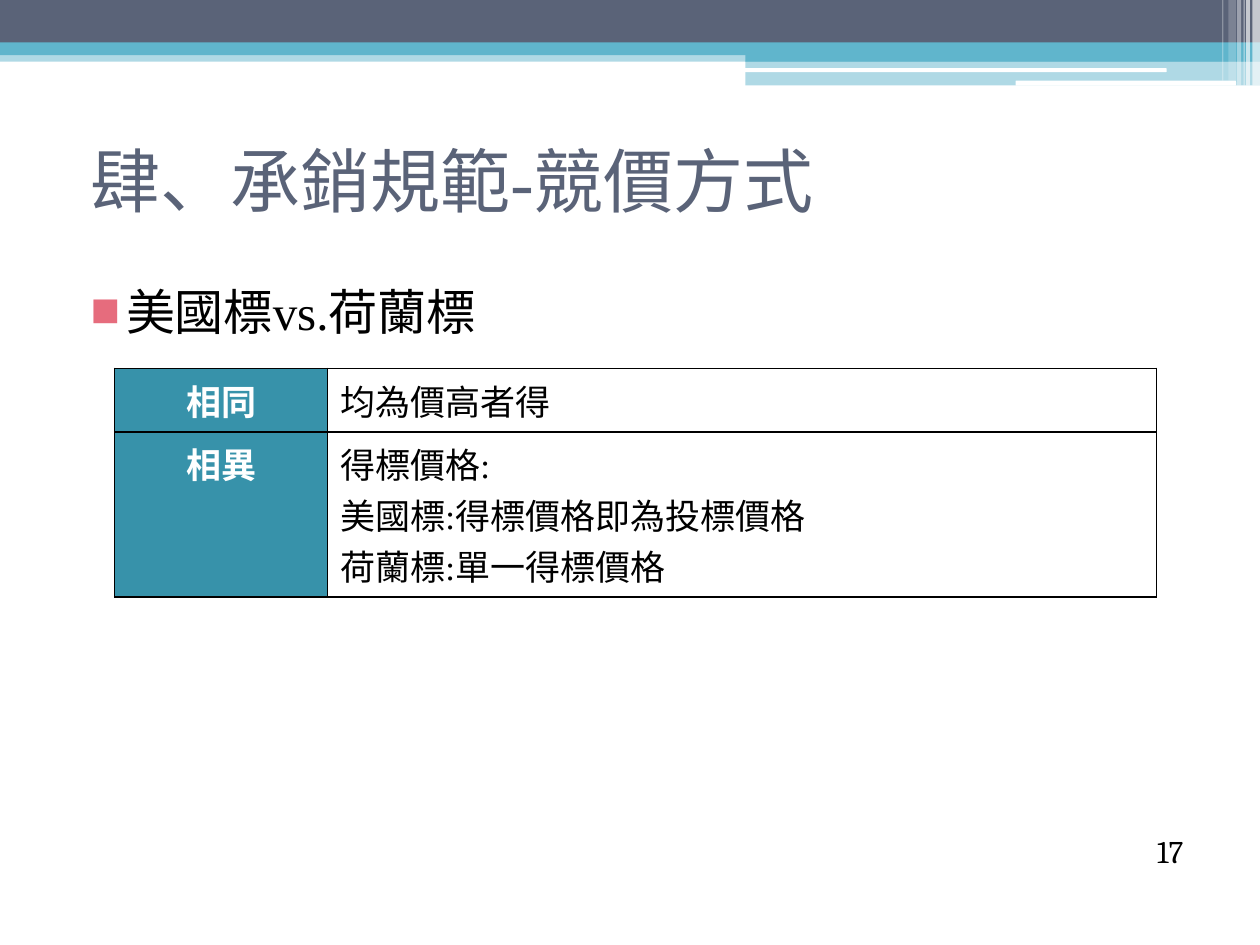
"""Build the slide comparing American and Dutch auctions."""
import lxml.etree
import pptx
import pptx.dml.color
import pptx.enum.shapes
import pptx.enum.text
import pptx.oxml.ns
import pptx.util

Pt = pptx.util.Pt
qn = pptx.oxml.ns.qn
SHAPES = pptx.enum.shapes.MSO_SHAPE
ANCHOR = pptx.enum.text.MSO_ANCHOR
ALIGN = pptx.enum.text.PP_ALIGN

SLATE, AQUA, WHITE, BLACK = "5A6378", "60B5CC", "FFFFFF", "000000"
TEAL, ROSE = "3792AA", "E66C7D"
SERIF = "Times New Roman"

HEADING = "肆、承銷規範-競價方式"
TOPIC = "美國標vs.荷蘭標"
COMPARISON = [
    ("相同", ["均為價高者得"]),
    ("相異", ["得標價格:", "美國標:得標價格即為投標價格", "荷蘭標:單一得標價格"]),
]
PAGE = "17"

BANDS = [
    ("RECTANGLE", (0, 28.8, 720, 6.5), AQUA, 50),
    ("RECTANGLE", (0, 0, 720, 24.5), SLATE, 100),
    ("RECTANGLE", (0, 24.3, 720, 7.2), AQUA, 100),
    ("RECTANGLE", (426, 28.1, 294, 7.2), AQUA, 100),
    ("RECTANGLE", (426, 34.6, 294, 14.2), AQUA, 50),
    ("ROUNDED_RECTANGLE", (425.5, 39, 241.2, 2.2), WHITE, 100),
    ("ROUNDED_RECTANGLE", (580.3, 46.1, 126, 2.9), WHITE, 100),
]
STRIPES = [
    (715.7, 4.3, 49, 65), (712.1, 2.2, 49, 65), (710.6, 0.72, 49, 60),
    (707, 2.2, 49, 40), (702, 4.3, 46.1, 20), (698.4, 0.72, 46.1, 30),
]
BANDS += [("RECTANGLE", (left, 0, width, height), WHITE, alpha)
          for left, width, height, alpha in STRIPES]


def paint(fill, color, alpha=100):
    fill.solid()
    fill.fore_color.rgb = pptx.dml.color.RGBColor.from_string(color)
    if alpha < 100:
        tint = fill._xPr.find(qn("a:solidFill"))[0]
        lxml.etree.SubElement(tint, qn("a:alpha"), val=str(alpha * 1000))


def place(shape, **box):
    for side, length in box.items():
        setattr(shape, side, Pt(length))


def write(paragraph, text, size, color, font=SERIF, align=None, bold=False):
    run = paragraph.add_run()
    run.text = text
    for key, value in {"name": font, "size": Pt(size), "bold": bold}.items():
        setattr(run.font, key, value)
    paint(run.font.fill, color)
    paragraph.alignment = align


def indent(paragraph, margin, first):
    properties = paragraph._p.get_or_add_pPr()
    properties.set("marL", str(Pt(margin)))
    properties.set("indent", str(Pt(first)))
    return properties


def add_bullet(properties, color, char):
    tint = lxml.etree.SubElement(properties, qn("a:buClr"))
    lxml.etree.SubElement(tint, qn("a:srgbClr"), val=color)
    lxml.etree.SubElement(properties, qn("a:buFont"), typeface=SERIF)
    lxml.etree.SubElement(properties, qn("a:buChar"), char=char)


def add_borders(cell, color, width):
    properties = cell._tc.get_or_add_tcPr()
    for position, side in enumerate(("lnL", "lnR", "lnT", "lnB")):
        line = lxml.etree.Element(qn("a:" + side), w=str(Pt(width)))
        fill = lxml.etree.SubElement(line, qn("a:solidFill"))
        lxml.etree.SubElement(fill, qn("a:srgbClr"), val=color)
        properties.insert(position, line)


def add_comparison(slide):
    table = slide.shapes.add_table(
        len(COMPARISON), 2, Pt(65.5), Pt(210.5), Pt(595.5), Pt(130.5)).table
    for column, width in zip(table.columns, (121.7, 473.8)):
        column.width = Pt(width)
    for row, height, (label, lines) in zip(table.rows, (36.3, 94.2), COMPARISON):
        row.height = Pt(height)
        styles = [([label], TEAL, WHITE, ALIGN.CENTER, True),
                  (lines, WHITE, BLACK, ALIGN.LEFT, False)]
        for cell, (texts, back, ink, align, bold) in zip(row.cells, styles):
            paint(cell.fill, back)
            add_borders(cell, BLACK, 1)
            frame = cell.text_frame
            for number, text in enumerate(texts):
                paragraph = frame.add_paragraph() if number else frame.paragraphs[0]
                write(paragraph, text, 20, ink, align=align, bold=bold)


def main():
    deck = pptx.Presentation()
    deck.slide_width, deck.slide_height = Pt(720), Pt(540)
    slide = deck.slides.add_slide(deck.slide_layouts[1])

    for kind, box, color, alpha in BANDS:
        band = slide.shapes.add_shape(getattr(SHAPES, kind), *map(Pt, box))
        paint(band.fill, color, alpha)
        band.line.fill.background()
        band.shadow.inherit = False

    title, body = slide.placeholders
    place(title, left=36, top=60.5, width=648, height=84.2)
    title.text_frame.vertical_anchor = ANCHOR.MIDDLE
    heading = title.text_frame.paragraphs[0]
    write(heading, HEADING, 40, SLATE, align=ALIGN.LEFT)
    indent(heading, 49, -40.3)

    place(body, left=36, top=157, width=648, height=340.5)
    topic = body.text_frame.paragraphs[0]
    write(topic, TOPIC, 28, BLACK)
    topic.space_before = Pt(3)
    add_bullet(indent(topic, 28.8, -20.2), ROSE, "■")

    add_comparison(slide)

    page = slide.shapes.add_textbox(Pt(623.5), Pt(471.6), Pt(59.8), Pt(28.8))
    page.text_frame.word_wrap = True
    page.text_frame.vertical_anchor = ANCHOR.BOTTOM
    write(page.text_frame.paragraphs[0], PAGE, 18, BLACK, "Cambria", ALIGN.RIGHT)

    deck.save("out.pptx")


if __name__ == "__main__":
    main()
